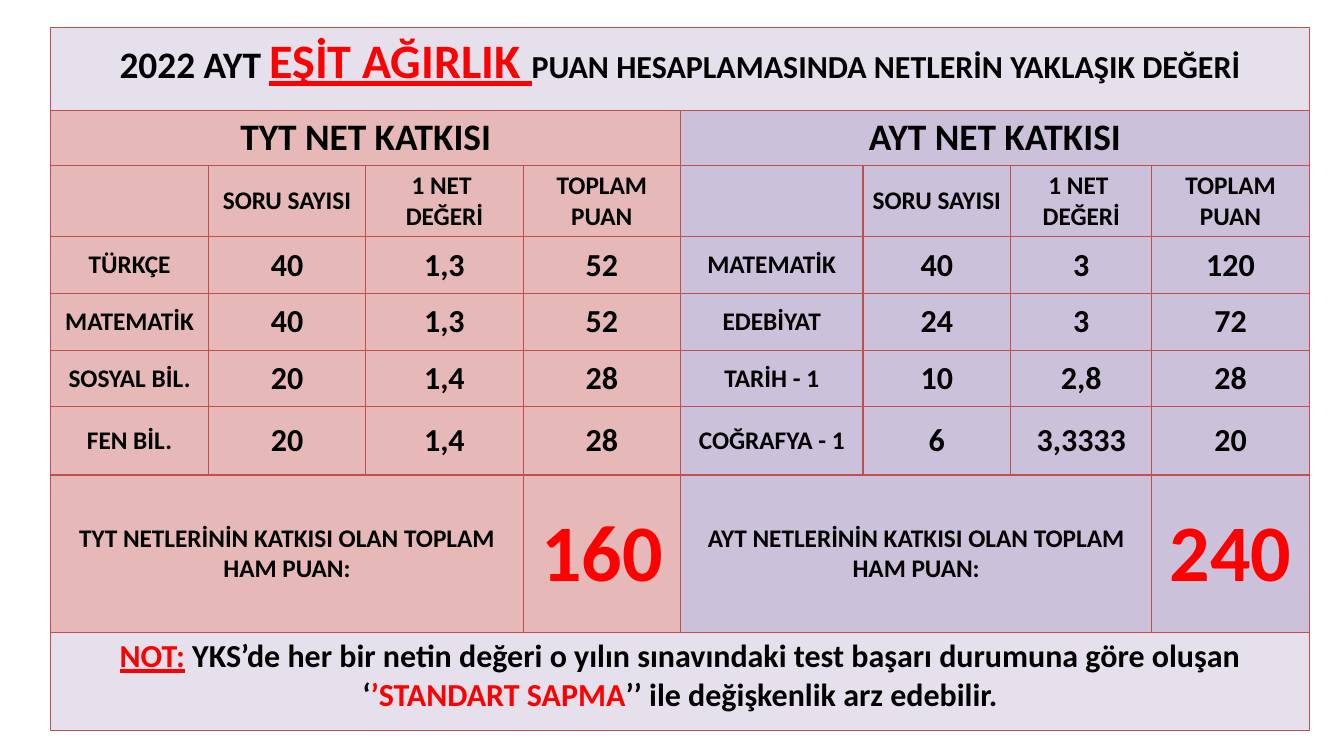
from dataclasses import dataclass

import pptx
import pptx.dml.color
import pptx.enum.text
import pptx.oxml
import pptx.oxml.ns
import pptx.util
from pptx.util import Inches

BLACK, RED = "000000", "FF0000"
BORDER, BANNER = "C0504D", "E6E0EC"
COLUMN_WIDTHS = [1.64] * 4 + [1.9, 1.54, 1.47, 1.64]
ROW_HEIGHTS = [0.86, 0.54, 0.7, 0.59, 0.59, 0.59, 0.71, 1.64, 1.02]
HEADINGS = ["SORU SAYISI", "1 NET \nDEĞERİ", "TOPLAM PUAN"]
MIDDLE = pptx.enum.text.MSO_ANCHOR.MIDDLE
TOP = pptx.enum.text.MSO_ANCHOR.TOP


@dataclass
class Exam:
    name: str
    first_column: int
    color: str
    subjects: list[tuple[str, str, str, str]]
    total: str


EXAMS = [
    Exam("TYT", 0, "E6B9B8", [
        ("TÜRKÇE", "40", "1,3", "52"),
        ("MATEMATİK", "40", "1,3", "52"),
        ("SOSYAL BİL.", "20", "1,4", "28"),
        ("FEN BİL.", "20", "1,4", "28"),
    ], "160"),
    Exam("AYT", 4, "CCC1DA", [
        ("MATEMATİK", "40", "3", "120"),
        ("EDEBİYAT", "24", "3", "72"),
        ("TARİH - 1", "10", "2,8", "28"),
        ("COĞRAFYA - 1", "6", "3,3333", "20"),
    ], "240"),
]


def rgb(color: str) -> pptx.dml.color.RGBColor:
    return pptx.dml.color.RGBColor.from_string(color)


def add_text(paragraph, text: str, *, size: float, color: str = BLACK,
             underline: bool = False) -> None:
    paragraph.alignment = pptx.enum.text.PP_ALIGN.CENTER
    run = paragraph.add_run()
    run.text = text
    run.font.name = "Calibri"
    run.font.size = pptx.util.Pt(size)
    run.font.bold = True
    run.font.underline = underline
    run.font.color.rgb = rgb(color)


def style_cell(cell, color: str) -> None:
    cell.fill.solid()
    cell.fill.fore_color.rgb = rgb(color)
    properties = cell._tc.get_or_add_tcPr()
    for position, side in enumerate(("lnL", "lnR", "lnT", "lnB")):
        properties.insert(position, pptx.oxml.parse_xml(
            f'<a:{side} {pptx.oxml.ns.nsdecls("a")} w="12700"><a:solidFill>'
            f'<a:srgbClr val="{BORDER}"/></a:solidFill></a:{side}>'))


def fill_cell(table, row: int, column: int, text: str, *, size: float,
              color: str = BLACK, span: int = 1, anchor=MIDDLE) -> None:
    cell = table.cell(row, column)
    if span > 1:
        cell.merge(table.cell(row, column + span - 1))
    cell.vertical_anchor = anchor
    for index, line in enumerate(text.split("\n")):
        frame = cell.text_frame
        paragraph = frame.add_paragraph() if index else frame.paragraphs[0]
        add_text(paragraph, line, size=size, color=color)


def fill_exam(table, exam: Exam) -> None:
    start = exam.first_column
    for row in range(1, len(ROW_HEIGHTS) - 1):
        for column in range(start, start + 4):
            style_cell(table.cell(row, column), exam.color)
    fill_cell(table, 1, start, f"{exam.name} NET KATKISI", size=28, span=4, anchor=TOP)
    for column, heading in enumerate(HEADINGS, start + 1):
        fill_cell(table, 2, column, heading, size=19)
    for row, subject in enumerate(exam.subjects, 3):
        for offset, value in enumerate(subject):
            fill_cell(table, row, start + offset, value, size=24 if offset else 19)
    fill_cell(table, 7, start, f"{exam.name} NETLERİNİN KATKISI OLAN TOPLAM HAM PUAN:",
              size=19, span=3)
    fill_cell(table, 7, start + 3, exam.total, size=60, color=RED)


def add_banner(table, row: int):
    """Merge a full-width row and return its paragraph."""
    for cell in table.rows[row].cells:
        style_cell(cell, BANNER)
    banner = table.cell(row, 0)
    banner.merge(table.cell(row, len(COLUMN_WIDTHS) - 1))
    return banner.text_frame.paragraphs[0]


def main() -> None:
    deck = pptx.Presentation()
    deck.slide_width, deck.slide_height = Inches(14), Inches(7.87)
    slide = deck.slides.add_slide(deck.slide_layouts[6])

    # Score table grid
    table = slide.shapes.add_table(
        len(ROW_HEIGHTS), len(COLUMN_WIDTHS), Inches(0.53), Inches(0.29),
        Inches(sum(COLUMN_WIDTHS)), Inches(sum(ROW_HEIGHTS))).table
    table.first_row = table.horz_banding = False
    for column, width in zip(table.columns, COLUMN_WIDTHS):
        column.width = Inches(width)
    for row, height in zip(table.rows, ROW_HEIGHTS):
        row.height = Inches(height)

    # Title
    title = add_banner(table, 0)
    add_text(title, "2022 AYT ", size=28)
    add_text(title, "EŞİT AĞIRLIK ", size=36, color=RED, underline=True)
    add_text(title, "PUAN HESAPLAMASINDA NETLERİN YAKLAŞIK DEĞERİ", size=24)

    # Exam halves
    for exam in EXAMS:
        fill_exam(table, exam)

    # Closing note
    note = add_banner(table, len(ROW_HEIGHTS) - 1)
    add_text(note, "NOT:", size=24, color=RED, underline=True)
    add_text(note, " YKS’de her bir netin değeri o yılın sınavındaki test "
                   "başarı durumuna göre oluşan ‘", size=24)
    add_text(note, "’STANDART SAPMA", size=24, color=RED)
    add_text(note, "’’ ile değişkenlik arz edebilir.", size=24)

    deck.save("out.pptx")


if __name__ == "__main__":
    main()
